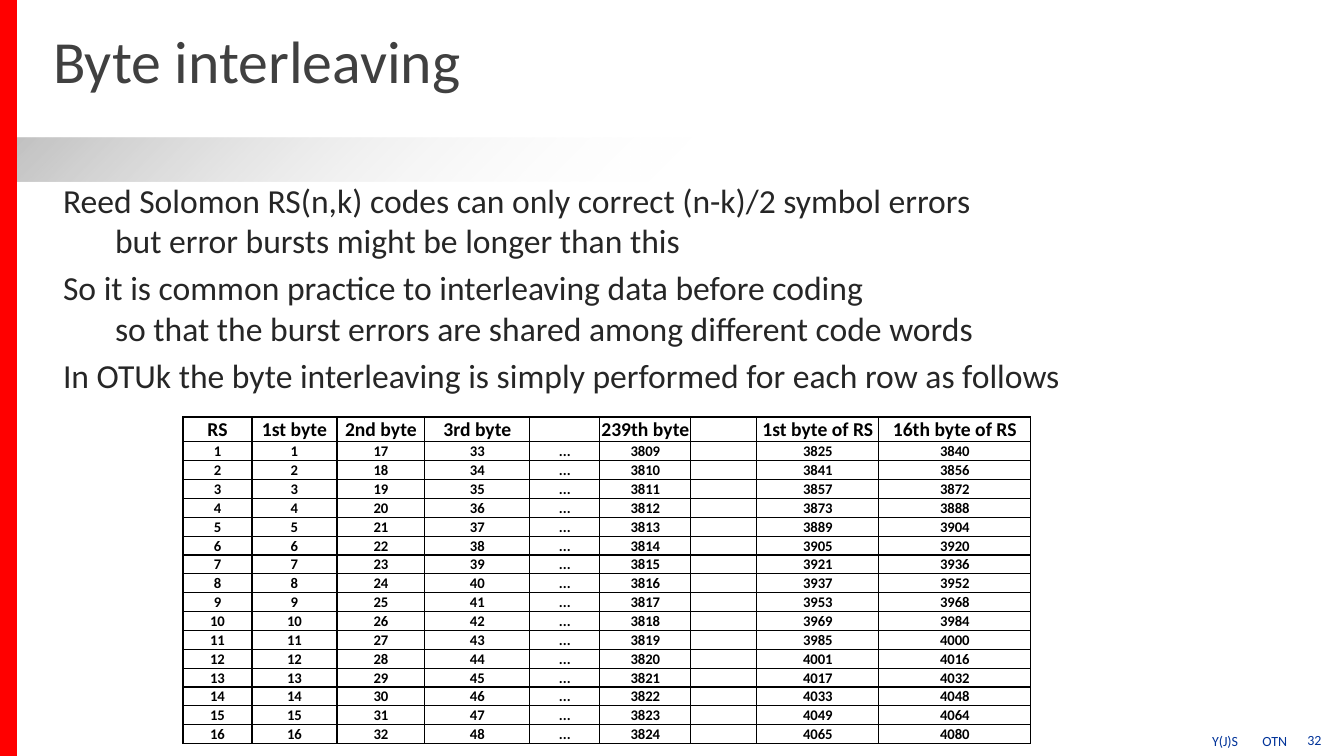
from dataclasses import dataclass

from lxml import etree
from pptx import Presentation
from pptx.dml.color import RGBColor
from pptx.enum.shapes import MSO_SHAPE
from pptx.enum.text import MSO_ANCHOR, MSO_AUTO_SIZE, PP_ALIGN
from pptx.oxml.ns import qn
from pptx.util import Pt

RECT = MSO_SHAPE.RECTANGLE
LEFT, CENTER = PP_ALIGN.LEFT, PP_ALIGN.CENTER
TOP, MIDDLE, BOTTOM = MSO_ANCHOR.TOP, MSO_ANCHOR.MIDDLE, MSO_ANCHOR.BOTTOM
NO_FIT = MSO_AUTO_SIZE.NONE
EMU_PER_PX = 914400 / 100.8


@dataclass(frozen=True)
class Theme:
    font: str = "Calibri"
    title: str = "404040"
    body: str = "262626"
    footer: str = "003399"
    table: str = "000000"
    side_bar: str = "FF0000"
    band_start: str = "BFBFBF"
    band_end: str = "FFFFFF"
    title_pt: float = 42.7
    body_pt: float = 24
    footer_pt: float = 10
    header_pt: float = 14
    cell_pt: float = 10.5
    border_pt: float = 1


THEME = Theme()


@dataclass(frozen=True)
class Box:
    x: int
    y: int
    w: int
    h: int

    def emu(self) -> tuple[int, ...]:
        return tuple(px(v) for v in (self.x, self.y, self.w, self.h))


@dataclass(frozen=True)
class Line:
    text: str
    indent: int = 0
    tab: int = 0
    before: float = 0
    spacing: float = 1.0


@dataclass(frozen=True)
class TextBlock:
    box: Box
    lines: tuple[Line, ...]
    size: float
    color: str
    margins: tuple[int, int] = (10, 5)
    align: PP_ALIGN = LEFT
    anchor: MSO_ANCHOR = TOP


TITLE = TextBlock(Box(53, 22, 1017, 87), (Line("Byte interleaving", spacing=0.85),),
                  THEME.title_pt, THEME.title, (0, 0), anchor=MIDDLE)
BODY = TextBlock(Box(53, 175, 1241, 482), (
    Line("Reed Solomon RS(n,k) codes can only correct (n-k)/2 symbol errors"),
    Line("but error bursts might be longer than this", indent=52),
    Line("So it is common practice to interleaving data before coding", before=4.8),
    Line("so that the burst errors are shared among different code words", indent=52),
    Line("In OTUk the byte interleaving is simply performed for each row as follows",
         before=4.8),
), THEME.body_pt, THEME.body)
FOOTER = TextBlock(Box(1199, 726, 123, 30), (Line("Y(J)S\tOTN", tab=45),),
                   THEME.footer_pt, THEME.footer, (13, 7))
PAGE_NUMBER = TextBlock(Box(1287, 725, 55, 30), (Line("32"),),
                        THEME.footer_pt, THEME.footer, (13, 7), CENTER)

SIDE_BAR = Box(0, 0, 17, 756)
BAND = Box(0, 138, 1344, 44)

CODE_WORDS = 16
COLUMN_WIDTHS = (69, 85, 88, 105, 70, 91, 66, 122, 152)
HEADER_HEIGHT, ROW_HEIGHT = 19, 18
TABLE = Box(183, 417, sum(COLUMN_WIDTHS), HEADER_HEIGHT + CODE_WORDS * ROW_HEIGHT)
HEADER = ("RS", "1st byte", "2nd byte", "3rd byte", "", "239th byte", "",
          "1st byte of RS", "16th byte of RS")


def px(value: float) -> int:
    return round(value * EMU_PER_PX)


def set_all(target, values: dict) -> None:
    for name, value in values.items():
        setattr(target, name, value)


def format_font(font, size: float, color: str, bold: bool = False) -> None:
    set_all(font, {"name": THEME.font, "size": Pt(size), "bold": bold})
    font.color.rgb = RGBColor.from_string(color)


def fill_text(sp, block: TextBlock) -> None:
    """Place a text shape and write the lines of its block."""
    left, top, width, height = block.box.emu()
    set_all(sp, {"left": left, "top": top, "width": width, "height": height})
    tf = sp.text_frame
    mx, my = (px(m) for m in block.margins)
    set_all(tf, {"word_wrap": True, "auto_size": NO_FIT, "vertical_anchor": block.anchor,
                 "margin_left": mx, "margin_right": mx,
                 "margin_top": my, "margin_bottom": my})
    for i, line in enumerate(block.lines):
        p = tf.add_paragraph() if i else tf.paragraphs[0]
        set_all(p, {"alignment": block.align, "line_spacing": line.spacing,
                    "space_before": Pt(line.before)})
        pPr = p._p.get_or_add_pPr()
        pPr.set("marL", str(px(line.indent)))
        pPr.set("indent", "0")
        if line.tab:
            tabs = etree.SubElement(pPr, qn("a:tabLst"))
            etree.SubElement(tabs, qn("a:tab"), pos=str(px(line.tab)), algn="l")
        r = p.add_run()
        r.text = line.text
        format_font(r.font, block.size, block.color)


def add_rect(s, box: Box, color: str):
    sp = s.shapes.add_shape(RECT, *box.emu())
    sp.shadow.inherit = False
    sp.fill.solid()
    sp.fill.fore_color.rgb = RGBColor.from_string(color)
    sp.line.fill.background()
    return sp


def fade_out(sp) -> None:
    """Replace the solid fill by a diagonal fade to clear at the middle."""
    solid = sp._element.spPr.find(qn("a:solidFill"))
    grad = etree.Element(qn("a:gradFill"), rotWithShape="1")
    stops = etree.SubElement(grad, qn("a:gsLst"))
    for pos, color, alpha in ((0, THEME.band_start, 100), (50, THEME.band_end, 0)):
        stop = etree.SubElement(stops, qn("a:gs"), pos=str(pos * 1000))
        clr = etree.SubElement(stop, qn("a:srgbClr"), val=color)
        etree.SubElement(clr, qn("a:alpha"), val=str(alpha * 1000))
    etree.SubElement(grad, qn("a:lin"), ang=str(45 * 60000), scaled="0")
    solid.getparent().replace(solid, grad)


def add_borders(cell) -> None:
    tcPr = cell._tc.get_or_add_tcPr()
    for side in ("lnL", "lnR", "lnT", "lnB"):
        ln = etree.SubElement(tcPr, qn(f"a:{side}"), w=str(Pt(THEME.border_pt)))
        fill = etree.SubElement(ln, qn("a:solidFill"))
        etree.SubElement(fill, qn("a:srgbClr"), val=THEME.table)


def fill_cell(cell, text: str, size: float) -> None:
    set_all(cell, {"margin_left": px(1), "margin_right": px(1), "margin_top": px(1),
                   "margin_bottom": 0, "vertical_anchor": BOTTOM})
    add_borders(cell)
    cell.fill.background()
    p = cell.text_frame.paragraphs[0]
    p.alignment = CENTER
    if text:
        r = p.add_run()
        r.text = text
        format_font(r.font, size, THEME.table, bold=True)
    else:
        p._p.get_or_add_endParaRPr().set("sz", str(round(size * 100)))


def code_word(n: int) -> tuple[str, ...]:
    """Give the byte numbers of the n-th interleaved code word."""
    parity = 3824 + CODE_WORDS * (n - 1)
    values = (n, n, n + 16, n + 32, "...", n + 3808, "", parity + 1, parity + 16)
    return tuple(str(v) for v in values)


def add_byte_table(s) -> None:
    rows = [HEADER] + [code_word(n) for n in range(1, CODE_WORDS + 1)]
    table = s.shapes.add_table(len(rows), len(HEADER), *TABLE.emu()).table
    set_all(table, {"first_row": False, "horz_banding": False})
    for column, width in zip(table.columns, COLUMN_WIDTHS):
        column.width = px(width)
    for i, texts in enumerate(rows):
        table.rows[i].height = px(ROW_HEIGHT if i else HEADER_HEIGHT)
        for j, text in enumerate(texts):
            fill_cell(table.cell(i, j), text, THEME.cell_pt if i else THEME.header_pt)


def main() -> None:
    prs = Presentation()
    set_all(prs, {"slide_width": px(1344), "slide_height": px(756)})
    s = prs.slides.add_slide(prs.slide_layouts[5])
    fade_out(add_rect(s, BAND, THEME.band_start))
    add_rect(s, SIDE_BAR, THEME.side_bar)
    fill_text(s.shapes.title, TITLE)
    for block in (PAGE_NUMBER, FOOTER, BODY):
        fill_text(s.shapes.add_textbox(*block.box.emu()), block)
    add_byte_table(s)
    prs.save("out.pptx")


if __name__ == "__main__":
    main()
